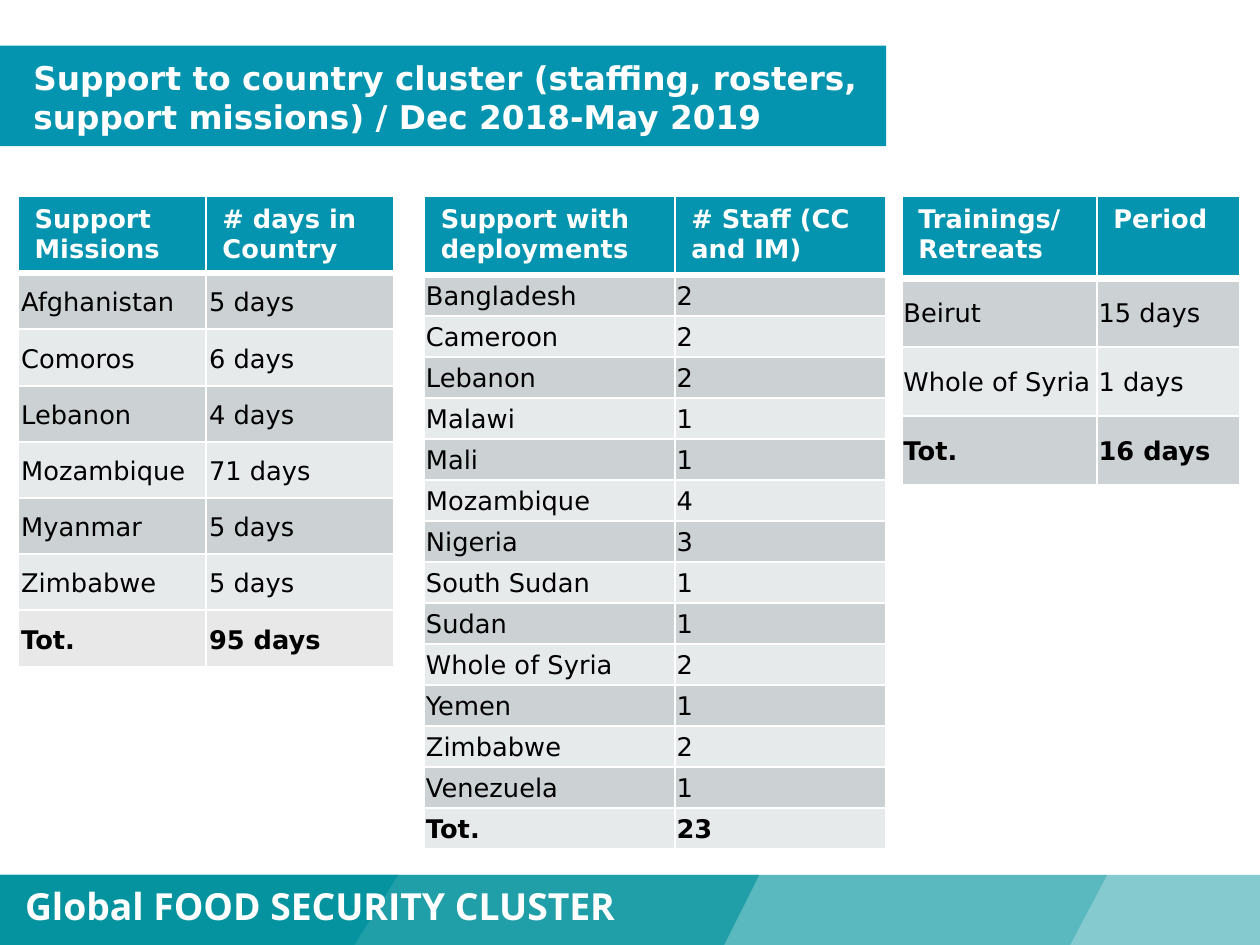
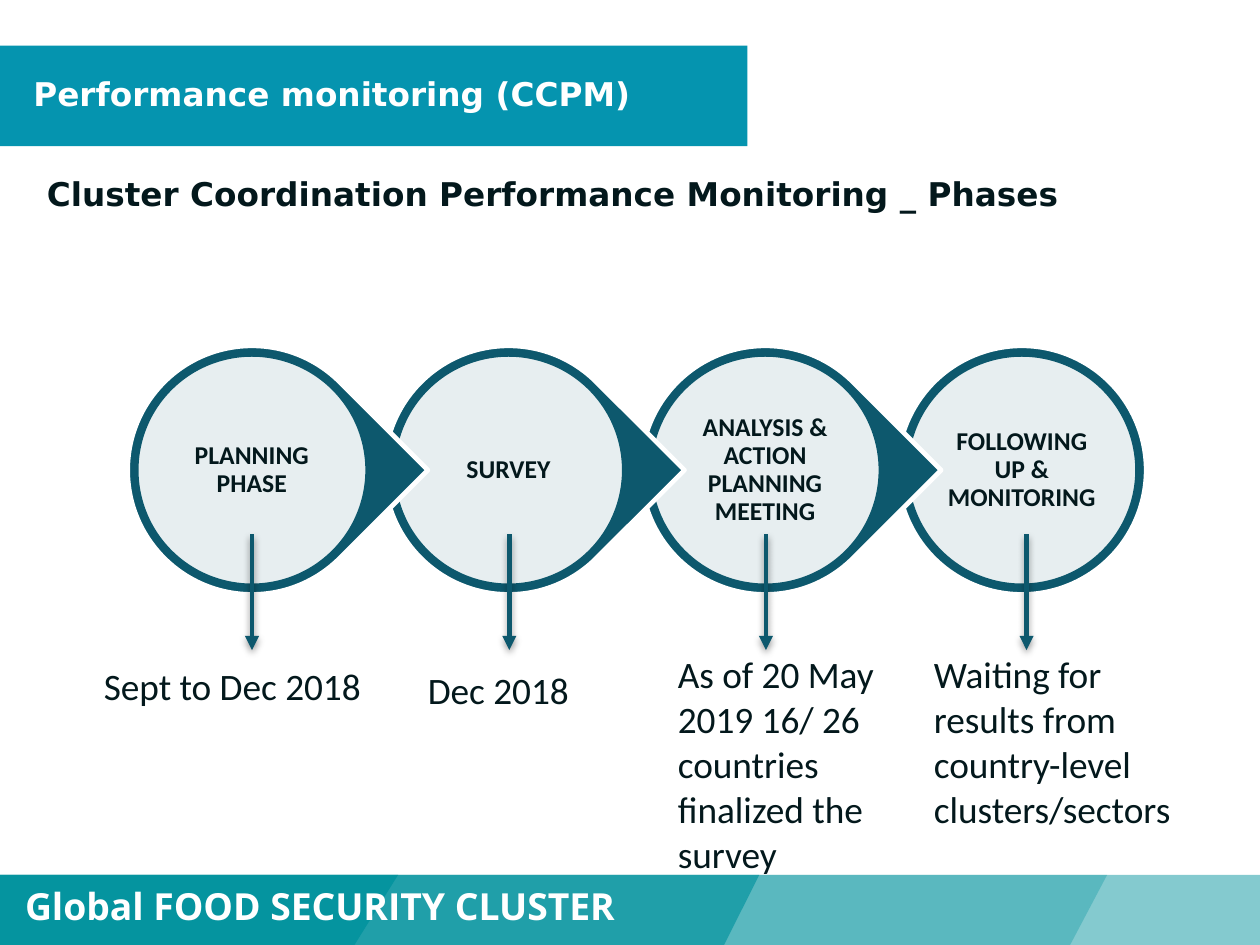
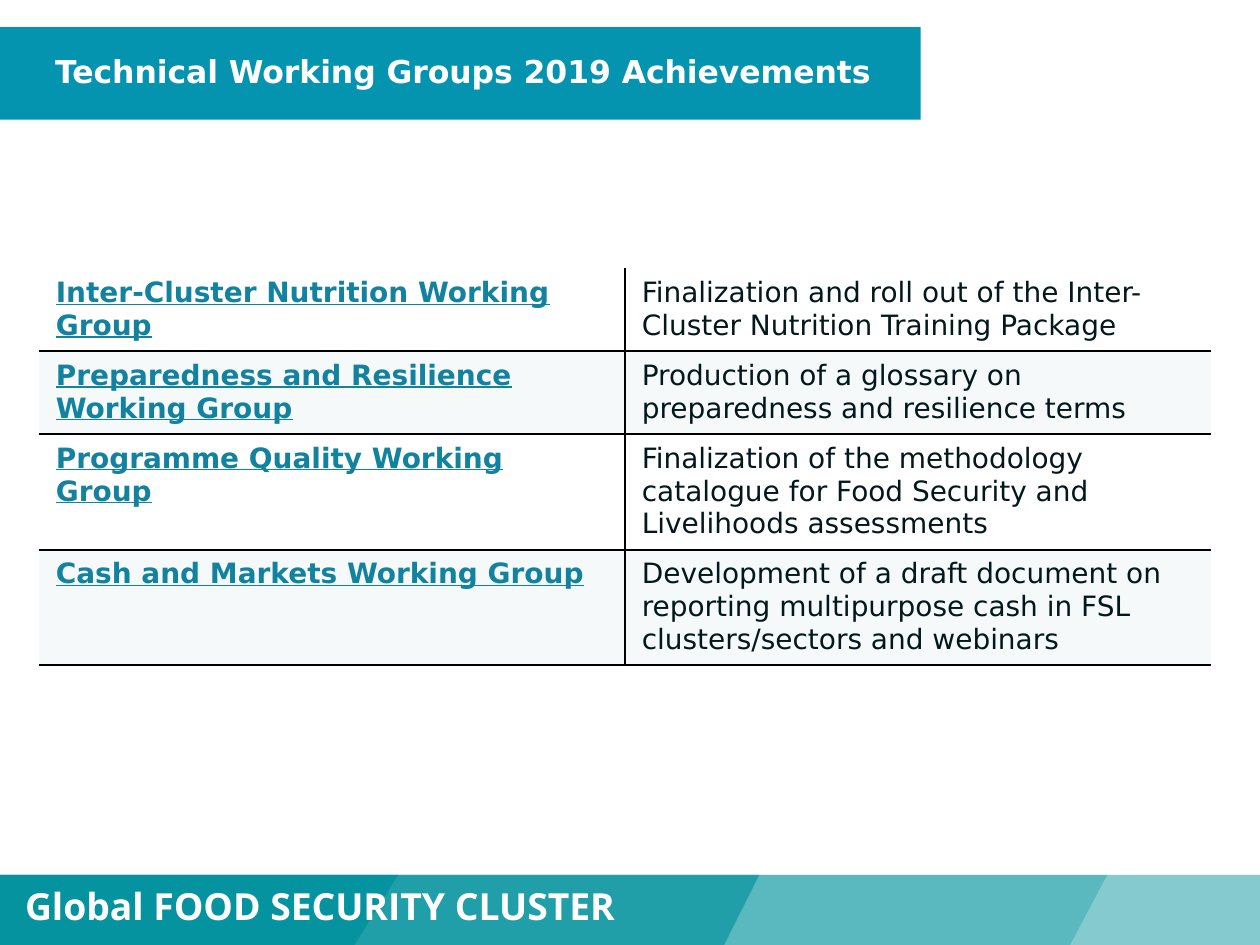
"""Build three slides on cluster support, performance monitoring and working groups."""
from dataclasses import dataclass
from typing import Optional

from lxml.etree import SubElement
from pptx import Presentation
from pptx.dml.color import RGBColor
from pptx.enum.shapes import MSO_CONNECTOR, MSO_SHAPE as Preset
from pptx.enum.text import MSO_ANCHOR as Anchor, MSO_AUTO_SIZE as AutoSize, PP_ALIGN as Align
from pptx.oxml import parse_xml
from pptx.oxml.ns import nsdecls, qn
from pptx.util import Cm, Pt

SLIDE_WIDTH, SLIDE_HEIGHT = 19.05, 14.29
FOOTER_TOP = 13.23
WHITE, BLACK, INK = "FFFFFF", "000000", "03181C"
BAND, FOOTER, PETROL, LINK = "0594AF", "05949F", "0D586D", "12829F"
ROW_FILLS = ("E7EAEB", "CCD1D4")
SANS, BODY, BRAND = "DejaVu Sans", "Calibri", "Open Sans"
NO_STYLE = "{2D5ABB26-0587-4C30-8999-92F81FD0307C}"
SHADOW = (
    f'<a:effectLst {nsdecls("a")}><a:outerShdw blurRad="39370" dist="20320" dir="5400000" '
    'rotWithShape="0"><a:srgbClr val="000000"><a:alpha val="38000"/></a:srgbClr>'
    "</a:outerShdw></a:effectLst>"
)


@dataclass(frozen=True)
class Box:
    """A rectangle in centimetres."""

    left: float
    top: float
    width: float
    height: float

    def lengths(self) -> tuple:
        """Return the four sides as lengths."""
        return Cm(self.left), Cm(self.top), Cm(self.width), Cm(self.height)


@dataclass(frozen=True)
class Style:
    """The look of a piece of text."""

    size: float
    name: str
    colour: str
    bold: bool = False
    underline: bool = False


@dataclass(frozen=True)
class FooterWedge:
    """A slanted footer layer with its top and bottom widths."""

    top_width: float
    bottom_width: float
    opacity: int


@dataclass(frozen=True)
class SupportTable:
    """A two-column table with a header and a total row."""

    left: float
    widths: tuple
    header_height: float
    row_height: float
    inset: float
    rows: tuple
    total_fill: Optional[str] = None


@dataclass(frozen=True)
class Stage:
    """A monitoring phase with its arrow and caption."""

    name: str
    arrow_x: float
    caption: str
    caption_box: Box


@dataclass(frozen=True)
class WorkingGroup:
    """A working group and its achievement."""

    name: str
    achievement: str
    height: float


TITLE_STYLE = Style(14, SANS, WHITE, bold=True)
CAPTION_STYLE = Style(16, BODY, INK)

WEDGES = (
    FooterWedge(16.74, 16.18, 33),
    FooterWedge(11.48, 10.95, 68),
    FooterWedge(6.02, 5.36, 100),
)

SUPPORT_TABLES = (
    SupportTable(0.27, (2.84, 2.84), 1.16, 0.85, 0.05, (
        ("Support Missions", "# days in Country"),
        ("Afghanistan", "5 days"),
        ("Comoros", "6 days"),
        ("Lebanon", "4 days"),
        ("Mozambique", "71 days"),
        ("Myanmar", "5 days"),
        ("Zimbabwe", "5 days"),
        ("Tot.", "95 days"),
    ), total_fill="E8E8E8"),
    SupportTable(6.41, (3.79, 3.19), 1.19, 0.62, 0.03, (
        ("Support with deployments", "# Staff (CC and IM)"),
        ("Bangladesh", "2"),
        ("Cameroon", "2"),
        ("Lebanon", "2"),
        ("Malawi", "1"),
        ("Mali", "1"),
        ("Mozambique", "4"),
        ("Nigeria", "3"),
        ("South Sudan", "1"),
        ("Sudan", "1"),
        ("Whole of Syria", "2"),
        ("Yemen", "1"),
        ("Zimbabwe", "2"),
        ("Venezuela", "1"),
        ("Tot.", "23"),
    )),
    SupportTable(13.63, (2.95, 2.17), 1.24, 1.04, 0.03, (
        ("Trainings/\nRetreats", "Period"),
        ("Beirut", "15 days"),
        ("Whole of Syria", "1 days"),
        ("Tot.", "16 days"),
    )),
)

STAGES = (
    Stage("PLANNING PHASE", 3.81, "Sept to Dec 2018", Box(1.32, 9.91, 5, 0.94)),
    Stage("SURVEY", 7.7, "Dec 2018", Box(6.22, 9.96, 3.25, 0.94)),
    Stage("ANALYSIS & ACTION PLANNING MEETING", 11.58,
          "As of 20 May 2019 16/ 26 countries finalized the survey", Box(10, 9.73, 3.53, 3.68)),
    Stage("FOLLOWING UP & MONITORING", 15.52,
          "Waiting for results from country-level clusters/sectors", Box(13.87, 9.73, 4.13, 3)),
)

WORKING_GROUPS = (
    WorkingGroup("Inter-Cluster Nutrition Working Group",
                 "Finalization and roll out of the Inter-Cluster Nutrition Training Package", 1.25),
    WorkingGroup("Preparedness and Resilience Working Group",
                 "Production of a glossary on preparedness and resilience terms", 1.25),
    WorkingGroup("Programme Quality Working Group",
                 "Finalization of the methodology catalogue for Food Security and "
                 "Livelihoods assessments", 1.75),
    WorkingGroup("Cash and Markets Working Group",
                 "Development of a draft document on reporting multipurpose cash in FSL "
                 "clusters/sectors and webinars", 1.75),
)


def rgb(colour: str) -> RGBColor:
    """Turn a hex string into a colour."""
    return RGBColor.from_string(colour)


def paint(fill, properties, colour: str, opacity: int = 100) -> None:
    """Fill with one colour at the given opacity in percent."""
    fill.solid()
    fill.fore_color.rgb = rgb(colour)
    if opacity < 100:
        colour_element = properties.find(f"{qn('a:solidFill')}/{qn('a:srgbClr')}")
        SubElement(colour_element, qn("a:alpha")).set("val", str(opacity * 1000))


def write(text_frame, text: str, style: Style, alignment=Align.LEFT, spacing=None) -> None:
    """Write text in one style."""
    text_frame.text = text
    for paragraph in text_frame.paragraphs:
        paragraph.alignment = alignment
        if spacing:
            paragraph.line_spacing = spacing
        font = paragraph.font
        font.size, font.name = Pt(style.size), style.name
        font.bold, font.underline = style.bold, style.underline
        font.color.rgb = rgb(style.colour)


def set_insets(target, inset: float, bottom: float) -> None:
    """Set the inner margins of a cell or text frame."""
    target.margin_left = target.margin_right = target.margin_top = Cm(inset)
    target.margin_bottom = Cm(bottom)


def add_text(slide, box: Box, text: str, style: Style) -> None:
    """Add a wrapping text box."""
    text_frame = slide.shapes.add_textbox(*box.lengths()).text_frame
    text_frame.word_wrap = True
    write(text_frame, text, style)


def finish_shape(shape, colour: str, opacity: int = 100, line: Optional[str] = None):
    """Give a shape its fill and outline, without a shadow."""
    shape.shadow.inherit = False
    paint(shape.fill, shape.element.spPr, colour, opacity)
    if line:
        shape.line.color.rgb = rgb(line)
        shape.line.width = Pt(2)
    else:
        shape.line.fill.background()
    return shape


def add_filled(slide, preset, box: Box, colour: str, opacity: int = 100, line: Optional[str] = None):
    """Add a filled preset shape."""
    return finish_shape(slide.shapes.add_shape(preset, *box.lengths()), colour, opacity, line)


def add_titled_slide(presentation, layout, title: str, band: Box, title_box: Box, size: float = 14):
    """Add a slide with its title over a coloured band."""
    slide = presentation.slides.add_slide(layout)
    band_shape = add_filled(slide, Preset.RECTANGLE, band, BAND)
    slide.shapes.element.insert(2, band_shape.element)
    placeholder = slide.shapes.title
    placeholder.left, placeholder.top, placeholder.width, placeholder.height = title_box.lengths()
    text_frame = placeholder.text_frame
    text_frame.word_wrap = True
    text_frame.auto_size = AutoSize.NONE
    text_frame.vertical_anchor = Anchor.TOP
    write(text_frame, title, Style(size, SANS, WHITE, bold=True))
    return slide


def add_footer(slide, layout) -> None:
    """Draw the footer and move it to the shared layout."""
    for placeholder in list(layout.placeholders)[1:]:
        layout.shapes.element.remove(placeholder.element)
    existing = len(slide.shapes)
    height = SLIDE_HEIGHT - FOOTER_TOP
    add_filled(slide, Preset.RECTANGLE, Box(0, FOOTER_TOP, SLIDE_WIDTH, height), FOOTER, 49)
    for wedge in WEDGES:
        builder = slide.shapes.build_freeform(Cm(wedge.top_width), Cm(FOOTER_TOP))
        builder.add_line_segments((
            (0, Cm(FOOTER_TOP)),
            (0, Cm(SLIDE_HEIGHT)),
            (Cm(wedge.bottom_width), Cm(SLIDE_HEIGHT)),
        ))
        finish_shape(builder.convert_to_shape(), FOOTER, wedge.opacity)
    add_text(slide, Box(0.13, FOOTER_TOP, 10.67, height), "Global FOOD SECURITY CLUSTER",
             Style(16, BRAND, WHITE, bold=True))
    for shape in list(slide.shapes)[existing:]:
        layout.shapes.element.append(shape.element)


def set_borders(cell, colour: str, widths: dict) -> None:
    """Draw the named cell edges, given in points; call before filling."""
    properties = cell._tc.get_or_add_tcPr()
    for edge in "LRTB":
        if edge in widths:
            line = SubElement(properties, qn(f"a:ln{edge}"), w=str(Pt(widths[edge])))
            solid = SubElement(line, qn("a:solidFill"))
            SubElement(solid, qn("a:srgbClr"), val=colour)


def add_plain_table(slide, left: float, top: float, widths: tuple, heights: list):
    """Add a table without a preset style."""
    box = Box(left, top, sum(widths), sum(heights))
    table = slide.shapes.add_table(len(heights), len(widths), *box.lengths()).table
    table._tbl.tblPr.find(qn("a:tableStyleId")).text = NO_STYLE
    table.first_row = table.horz_banding = False
    for column, width in zip(table.columns, widths):
        column.width = Cm(width)
    for row, height in zip(table.rows, heights):
        row.height = Cm(height)
    return table


def add_support_table(slide, spec: SupportTable) -> None:
    """Add a banded table with header and total."""
    last = len(spec.rows) - 1
    heights = [spec.header_height] + [spec.row_height] * last
    table = add_plain_table(slide, spec.left, 2.97, spec.widths, heights)
    for row_index, texts in enumerate(spec.rows):
        is_header, is_total = row_index == 0, row_index == last
        fill = BAND if is_header else ROW_FILLS[row_index % 2]
        if is_total and spec.total_fill:
            fill = spec.total_fill
        style = Style(11, SANS, WHITE if is_header else BLACK, bold=is_header or is_total)
        edges = {"L": 1, "R": 1, "T": 3 if row_index == 1 else 1, "B": 3 if is_header else 1}
        for column_index, text in enumerate(texts):
            cell = table.cell(row_index, column_index)
            write(cell.text_frame, text, style)
            if not is_header:
                set_insets(cell, spec.inset, 0)
                cell.vertical_anchor = Anchor.MIDDLE
            set_borders(cell, WHITE, edges)
            paint(cell.fill, cell._tc.tcPr, fill)


def add_stage_circles(slide) -> None:
    """Draw the phase circles from right to left so that each tip overlaps the next."""
    left, top, pitch, outer, inner = 1.93, 5.23, 3.88, 3.76, 3.5
    gap = (outer - inner) / 2
    for index, stage in reversed(list(enumerate(STAGES))):
        x = left + index * pitch
        is_last = index == len(STAGES) - 1
        ring = add_filled(slide, Preset.OVAL if is_last else Preset.TEAR,
                          Box(x, top, outer, outer), PETROL, line=WHITE)
        ring.rotation = 0 if is_last else 45
        disc = add_filled(slide, Preset.OVAL, Box(x + gap, top + gap, inner, inner),
                          WHITE, 90, line=PETROL)
        text_frame = disc.text_frame
        text_frame.word_wrap = True
        text_frame.vertical_anchor = Anchor.MIDDLE
        set_insets(text_frame, 0.05, 0.05)
        write(text_frame, stage.name, Style(11, BODY, INK, bold=True), Align.CENTER, 0.9)


def add_arrow(slide, x: float) -> None:
    """Add a downward arrow with a soft shadow."""
    arrow = slide.shapes.add_connector(MSO_CONNECTOR.STRAIGHT, Cm(x), Cm(8.08), Cm(x), Cm(9.83))
    arrow.line.color.rgb = rgb(PETROL)
    arrow.line.width = Pt(2)
    SubElement(arrow.line._get_or_add_ln(), qn("a:tailEnd"), type="triangle")
    arrow.element.spPr.append(parse_xml(SHADOW))


def add_group_table(slide) -> None:
    """Add the table of working groups and achievements."""
    heights = [group.height for group in WORKING_GROUPS]
    table = add_plain_table(slide, 0.59, 4.06, (8.86, 8.86), heights)
    styles = (Style(12, SANS, LINK, bold=True, underline=True), Style(12, SANS, INK))
    for row_index, group in enumerate(WORKING_GROUPS):
        for column_index, text in enumerate((group.name, group.achievement)):
            cell = table.cell(row_index, column_index)
            write(cell.text_frame, text, styles[column_index])
            edges = {"L" if column_index else "R": 1, "B": 1}
            if row_index:
                edges["T"] = 1
            set_borders(cell, BLACK, edges)
            if row_index % 2:
                paint(cell.fill, cell._tc.tcPr, "CFE3E8", 20)


def main() -> None:
    """Build and save the presentation."""
    presentation = Presentation()
    presentation.slide_width, presentation.slide_height = Cm(SLIDE_WIDTH), Cm(SLIDE_HEIGHT)
    layout = presentation.slide_layouts.get_by_name("Title Only")

    support = add_titled_slide(
        presentation, layout,
        "Support to country cluster (staffing, rosters, support missions) / Dec 2018-May 2019",
        Box(0, 0.69, 13.4, 1.52), Box(0.25, 0.74, 13.13, 1.47))
    add_footer(support, layout)
    for spec in SUPPORT_TABLES:
        add_support_table(support, spec)

    monitoring = add_titled_slide(
        presentation, layout, "Performance monitoring (CCPM)",
        Box(0, 0.69, 11.3, 1.52), Box(0.25, 0.99, 10.36, 0.99))
    add_text(monitoring, Box(0.46, 2.51, 18, 0.86),
             "Cluster Coordination Performance Monitoring _ Phases", Style(14, SANS, INK, bold=True))
    add_stage_circles(monitoring)
    for stage in STAGES:
        add_arrow(monitoring, stage.arrow_x)
        add_text(monitoring, stage.caption_box, stage.caption, CAPTION_STYLE)

    groups = add_titled_slide(
        presentation, layout, "Technical Working Groups 2019 Achievements",
        Box(0, 0.41, 13.92, 1.4), Box(0.58, 0.66, 13.31, 0.94), 13.5)
    add_group_table(groups)

    presentation.save("out.pptx")


if __name__ == "__main__":
    main()
